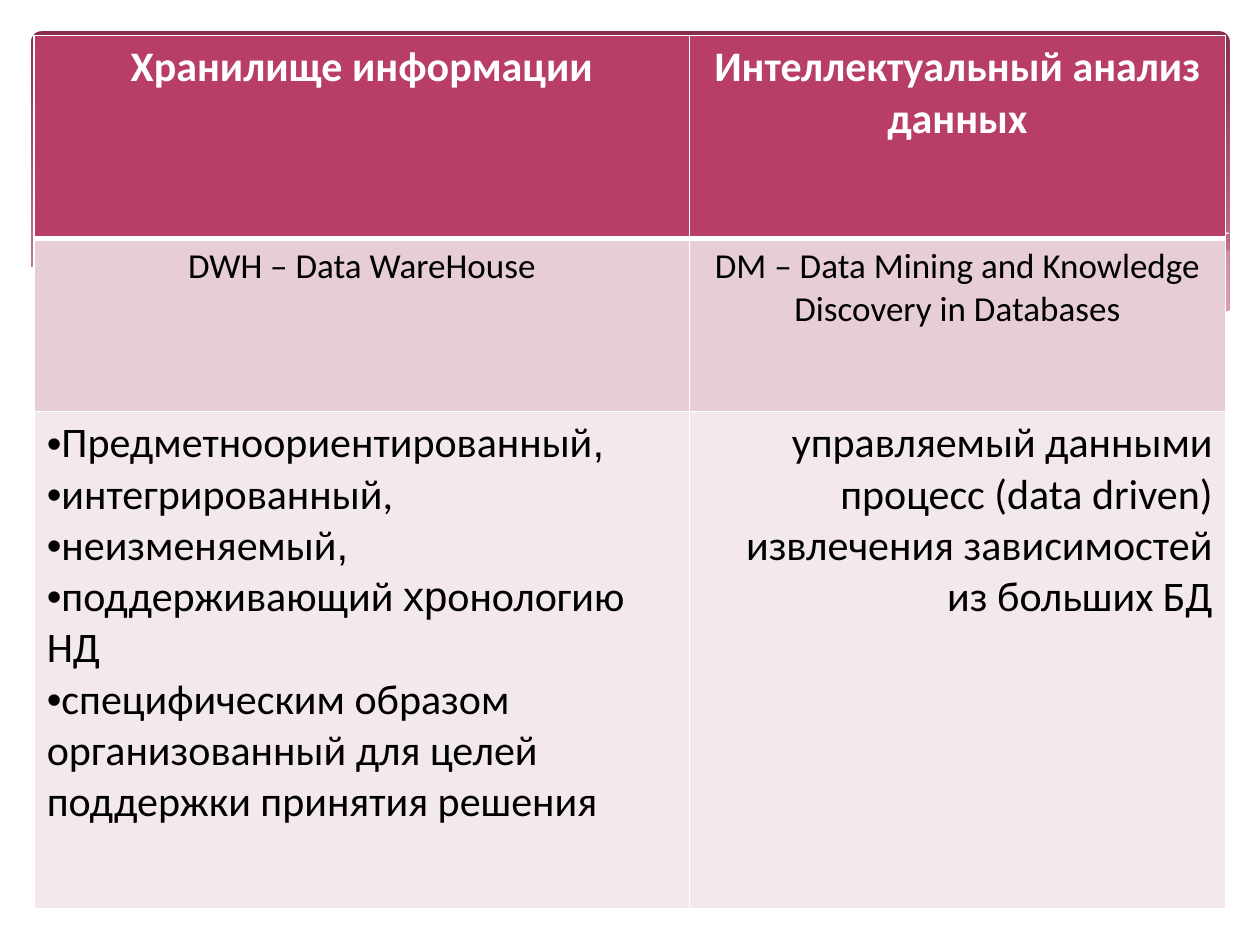
from lxml.etree import SubElement
from pptx import Presentation
from pptx.dml.color import RGBColor
from pptx.enum.shapes import MSO_SHAPE
from pptx.enum.text import PP_ALIGN
from pptx.oxml.ns import qn
from pptx.util import Cm, Pt

WHITE, BLACK = "FFFFFF", "000000"
BODY_FONT, ACCENT_FONT = "Calibri", "Arial"

# A paragraph is a list of runs; a tuple run carries its own font.
QUALITIES = [
    ["Предметноориентированный", (",", ACCENT_FONT)],
    ["интегрированный,"],
    ["неизменяемый", (",", ACCENT_FONT)],
    ["поддерживающий ", ("хр", ACCENT_FONT), "онологию НД"],
    ["специфическим образом организованный для целей поддержки принятия решения"],
]
PROCESS = "управляемый данными процесс (data driven) извлечения зависимостей из больших БД"

CENTER, LEFT, RIGHT = PP_ALIGN.CENTER, PP_ALIGN.LEFT, PP_ALIGN.RIGHT
COLUMN_WIDTHS = [13.21, 10.8]
ROWS = [
    dict(height=4.09, fill="B83D68", color=WHITE, size=24, bold=True, top=1, bottom=3,
         aligns=[CENTER, CENTER],
         cells=[[["Хранилище информации"]], [["Интеллектуальный анализ данных"]]]),
    dict(height=3.49, fill="E6CED4", color=BLACK, size=20, bold=False, top=3, bottom=1,
         aligns=[CENTER, CENTER],
         cells=[[["DWH – Data WareHouse"]],
                [["DM – Data Mining and Knowledge Discovery in Databases"]]]),
    dict(height=10.01, fill="F3E8EB", color=BLACK, size=24, bold=False, top=1, bottom=1,
         aligns=[LEFT, RIGHT], cells=[QUALITIES, [[PROCESS]]]),
]

# Outlines in centimetres
RIGHT_WAVE = [(24.77, 5.05), (23.75, 5.26), (22.25, 5.56), (20.45, 6.02), (18.52, 6.43),
              (16.79, 6.73), (18.24, 6.91), (20.4, 7.06), (22.38, 6.93), (23.57, 6.68),
              (24.79, 6.27), (24.79, 5.05)]
MIDDLE_WAVE = [(22.68, 6.93), (20.5, 6.6), (17.93, 6.1), (15.98, 5.64), (13.74, 5.16),
               (11.81, 4.85), (9.65, 4.72), (7.26, 4.85), (9.19, 5.16), (11.4, 5.64),
               (14.38, 6.3), (16.89, 6.76), (19, 7.01), (20.78, 7.06)]
FALLING_LINE = [(7.85, 4.95), (8.97, 4.8), (10.57, 4.75), (12.95, 4.88), (15.44, 5.18),
                (17.65, 5.56), (20.19, 6.12), (23.04, 6.91)]
RISING_LINE = [(15.57, 6.53), (17.65, 5.97), (19.71, 5.49), (22, 5.05), (23.47, 4.83),
               (24.77, 4.7)]
WHITE_WAVE = [(24.82, 6.25), (23.62, 6.65), (21.92, 6.96), (20.14, 7.01), (17.98, 6.86),
              (15.32, 6.45), (12.78, 5.92), (10.62, 5.41), (8, 4.93), (5.84, 4.7),
              (4.09, 4.67), (2.41, 4.85), (1.17, 5.16), (0.58, 5.41), (0.58, 8.36),
              (24.82, 8.36)]


def rgb(value):
    return RGBColor.from_string(value)


def add_outline(shapes, points, closed):
    (x, y), *rest = [(round(px * 100), round(py * 100)) for px, py in points]
    builder = shapes.build_freeform(x, y, scale=Cm(0.01))
    builder.add_line_segments(rest, close=closed)
    outline = builder.convert_to_shape()
    outline.shadow.inherit = False
    return outline


def add_wave(shapes, points, color, opacity=100):
    wave = add_outline(shapes, points, True)
    wave.line.fill.background()
    wave.fill.solid()
    wave.fill.fore_color.rgb = rgb(color)
    if opacity < 100:
        color_element = wave.element.spPr.find(qn("a:solidFill"))[0]
        SubElement(color_element, qn("a:alpha"), val=str(opacity * 1000))


def add_curve(shapes, points):
    curve = add_outline(shapes, points, False)
    curve.fill.background()
    curve.line.color.rgb = rgb(WHITE)
    curve.line.width = Pt(0)


def add_banner(shapes):
    banner = shapes.add_shape(MSO_SHAPE.ROUNDED_RECTANGLE,
                              Cm(0.63), Cm(0.63), Cm(24.16), Cm(6.86))
    banner.adjustments[0] = 0.03
    banner.shadow.inherit = False
    banner.line.fill.background()
    banner.fill.gradient()
    banner.fill.gradient_angle = 270
    for stop, (position, color) in zip(banner.fill.gradient_stops,
                                       [(0, "8A2E4E"), (0.9, "D788A3")]):
        stop.position = position
        stop.color.rgb = rgb(color)


def set_borders(cell, top, bottom):
    properties = cell._tc.get_or_add_tcPr()
    for side, width in dict(L=1, R=1, T=top, B=bottom).items():
        line = SubElement(properties, qn(f"a:ln{side}"), w=str(Pt(width)))
        SubElement(SubElement(line, qn("a:solidFill")), qn("a:srgbClr"), val=WHITE)


def add_bullet(paragraph):
    properties = paragraph._p.get_or_add_pPr()
    SubElement(properties, qn("a:buFont"), typeface=ACCENT_FONT)
    SubElement(properties, qn("a:buChar"), char="•")


def fill_cell(cell, paragraphs, align, row):
    set_borders(cell, row["top"], row["bottom"])
    cell.fill.solid()
    cell.fill.fore_color.rgb = rgb(row["fill"])
    frame = cell.text_frame
    for index, runs in enumerate(paragraphs):
        paragraph = frame.add_paragraph() if index else frame.paragraphs[0]
        paragraph.alignment = align
        if len(paragraphs) > 1:
            add_bullet(paragraph)
        for item in runs:
            text, font_name = item if isinstance(item, tuple) else (item, BODY_FONT)
            run = paragraph.add_run()
            run.text = text
            run.font.name = font_name
            run.font.size = Pt(row["size"])
            run.font.bold = row["bold"]
            run.font.color.rgb = rgb(row["color"])


def add_comparison(shapes):
    table = shapes.add_table(len(ROWS), len(COLUMN_WIDTHS), Cm(0.69), Cm(0.72),
                             Cm(sum(COLUMN_WIDTHS)),
                             Cm(sum(row["height"] for row in ROWS))).table
    table.horz_banding = False
    for column, width in zip(table.columns, COLUMN_WIDTHS):
        column.width = Cm(width)
    for r, row in enumerate(ROWS):
        table.rows[r].height = Cm(row["height"])
        for c, (paragraphs, align) in enumerate(zip(row["cells"], row["aligns"])):
            fill_cell(table.cell(r, c), paragraphs, align, row)


def main():
    deck = Presentation()
    deck.slide_width, deck.slide_height = Cm(25.4), Cm(19.05)
    shapes = deck.slides.add_slide(deck.slide_layouts[6]).shapes
    add_banner(shapes)
    add_wave(shapes, RIGHT_WAVE, "F4E7ED", 29)
    add_wave(shapes, MIDDLE_WAVE, "F4E7ED", 40)
    add_curve(shapes, FALLING_LINE)
    add_curve(shapes, RISING_LINE)
    add_wave(shapes, WHITE_WAVE, WHITE)
    add_comparison(shapes)
    deck.save("out.pptx")


if __name__ == "__main__":
    main()
